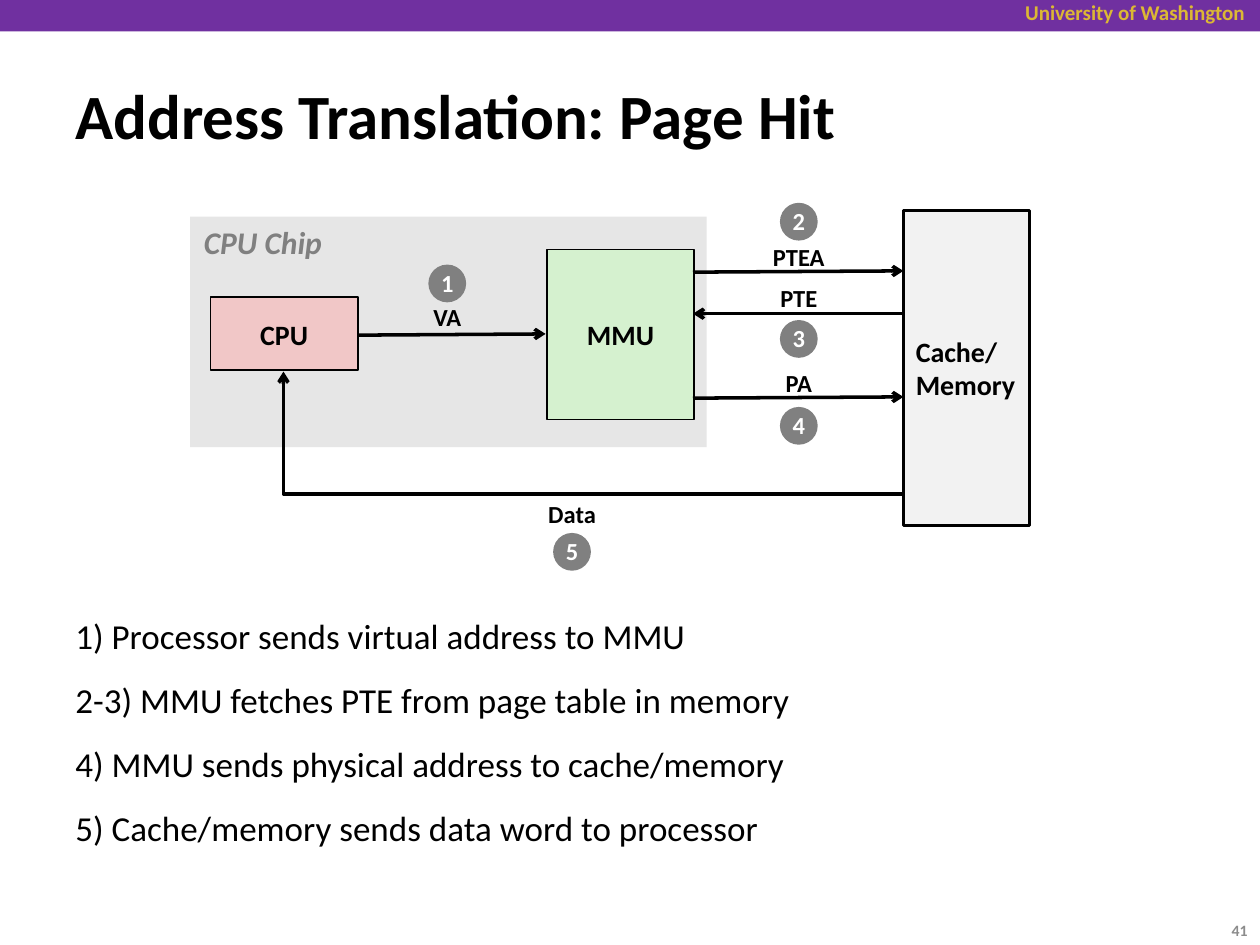
from lxml import etree
from pptx import Presentation
from pptx.dml.color import RGBColor
from pptx.enum.shapes import MSO_CONNECTOR, MSO_SHAPE
from pptx.enum.text import MSO_ANCHOR, PP_ALIGN
from pptx.oxml.ns import qn
from pptx.util import Inches, Pt

RECT, OVAL = MSO_SHAPE.RECTANGLE, MSO_SHAPE.OVAL
STRAIGHT, ELBOW = MSO_CONNECTOR.STRAIGHT, MSO_CONNECTOR.ELBOW
LEFT, CENTER, RIGHT = PP_ALIGN.LEFT, PP_ALIGN.CENTER, PP_ALIGN.RIGHT
TOP, MIDDLE = MSO_ANCHOR.TOP, MSO_ANCHOR.MIDDLE

FONT = "Calibri"
BLACK = RGBColor(0x00, 0x00, 0x00)
WHITE = RGBColor(0xFF, 0xFF, 0xFF)
PURPLE = RGBColor(0x70, 0x30, 0xA0)
GOLD = RGBColor(0xDC, 0xB8, 0x34)
GRAY = RGBColor(0x80, 0x80, 0x80)
PAGE_GRAY = RGBColor(0x8C, 0x8C, 0x8C)
CHIP_GRAY = RGBColor(0xE6, 0xE6, 0xE6)
MEMORY_GRAY = RGBColor(0xF2, 0xF2, 0xF2)
GREEN = RGBColor(0xD5, 0xF1, 0xCF)
PINK = RGBColor(0xF1, 0xC7, 0xC7)

SCHOOL = "University of Washington"
TITLE = "Address Translation: Page Hit"
PAGE = "41"
STEPS = [
    "1) Processor sends virtual address to MMU",
    "2-3) MMU fetches PTE from page table in memory",
    "4) MMU sends physical address to cache/memory",
    "5) Cache/memory sends data word to processor",
]

# lines, (left, top, width, height), fill, outline points, alignment
UNITS = [
    (["MMU"], (4.34, 1.98, 1.17, 1.35), GREEN, 1, CENTER),
    (["Cache/", "Memory"], (7.17, 1.67, 1, 2.5), MEMORY_GRAY, 1.5, LEFT),
    (["CPU"], (1.67, 2.36, 1.17, 0.58), PINK, 1, CENTER),
]

# kind, start, end
ARROWS = [
    (STRAIGHT, (2.84, 2.66), (4.33, 2.65)),
    (STRAIGHT, (5.5, 2.16), (7.17, 2.15)),
    (STRAIGHT, (7.17, 2.49), (5.5, 2.49)),
    (STRAIGHT, (5.5, 3.16), (7.17, 3.15)),
    (ELBOW, (7.17, 3.92), (2.25, 2.95)),
]

# label, centre x, label top, badge top; badges are numbered in this order
MESSAGES = [
    ("VA", 3.55, 2.36, 2.1),
    ("PTEA", 6.34, 1.88, 1.61),
    ("PTE", 6.34, 2.21, 2.54),
    ("PA", 6.34, 2.88, 3.23),
    ("Data", 4.54, 3.92, 4.23),
]
LABEL_W, LABEL_H, BADGE = 0.62, 0.33, 0.3


def write(shape, lines, size, color=BLACK, bold=True, italic=False,
          align=LEFT, anchor=MIDDLE, wrap=False, gap=0, spacing=None):
    tf = shape.text_frame
    tf.word_wrap = wrap
    tf.vertical_anchor = anchor
    for i, line in enumerate(lines):
        p = tf.add_paragraph() if i else tf.paragraphs[0]
        p.alignment = align
        if i and gap:
            p.space_before = Pt(gap)
        if spacing:
            p.line_spacing = spacing
        r = p.add_run()
        r.text = line
        r.font.name = FONT
        r.font.size = Pt(size)
        r.font.bold = bold
        r.font.italic = italic
        r.font.color.rgb = color


def add_text(s, box, lines, size, **style):
    write(s.shapes.add_textbox(*map(Inches, box)), lines, size, **style)


def add_block(s, kind, box, fill, outline=0):
    sp = s.shapes.add_shape(kind, *map(Inches, box))
    sp.shadow.inherit = False
    sp.fill.solid()
    sp.fill.fore_color.rgb = fill
    if outline:
        sp.line.color.rgb = BLACK
        sp.line.width = Pt(outline)
    else:
        sp.line.fill.background()
    return sp


def add_arrow(s, kind, start, end):
    c = s.shapes.add_connector(kind, *map(Inches, start + end))
    c.line.color.rgb = BLACK
    c.line.width = Pt(2)
    sp_pr = c._element.spPr
    if kind == ELBOW:  # a single bend instead of two
        sp_pr.find(qn("a:prstGeom")).set("prst", "bentConnector2")
    etree.SubElement(sp_pr.find(qn("a:ln")), qn("a:tailEnd"), type="arrow")
    etree.SubElement(sp_pr, qn("a:effectLst"))


def main():
    prs = Presentation()
    prs.slide_width, prs.slide_height = Inches(10), Inches(7.5)
    s = prs.slides.add_slide(prs.slide_layouts[6])

    add_block(s, RECT, (0, 0, 10, 0.25), PURPLE)
    add_text(s, (7.33, -0.05, 2.65, 0.3), [SCHOOL], 12, color=GOLD,
             align=RIGHT, anchor=TOP, wrap=True)
    add_text(s, (0.5, 0.48, 9.53, 0.86), [TITLE], 36, wrap=True)
    add_text(s, (0.5, 4.83, 7.42, 2.25), STEPS, 20, bold=False,
             anchor=TOP, wrap=True, gap=12.5)

    add_block(s, RECT, (1.51, 1.72, 4.1, 1.83), CHIP_GRAY)
    add_text(s, (1.52, 1.72, 1.16, 0.4), ["CPU Chip"], 18, color=GRAY,
             italic=True, anchor=TOP)
    for lines, box, fill, outline, align in UNITS:
        write(add_block(s, RECT, box, fill, outline), lines, 16, align=align)
    for arrow in ARROWS:
        add_arrow(s, *arrow)
    for number, (label, x, label_top, badge_top) in enumerate(MESSAGES, 1):
        add_text(s, (x - LABEL_W / 2, label_top, LABEL_W, LABEL_H), [label],
                 14, align=CENTER, spacing=0.98)
        badge = add_block(s, OVAL, (x - BADGE / 2, badge_top, BADGE, BADGE),
                          GRAY)
        write(badge, [str(number)], 14, color=WHITE, align=CENTER,
              spacing=0.98)

    add_text(s, (9.33, 7.18, 0.67, 0.4), [PAGE], 9, color=PAGE_GRAY,
             align=RIGHT, wrap=True)
    prs.save("out.pptx")


if __name__ == "__main__":
    main()
